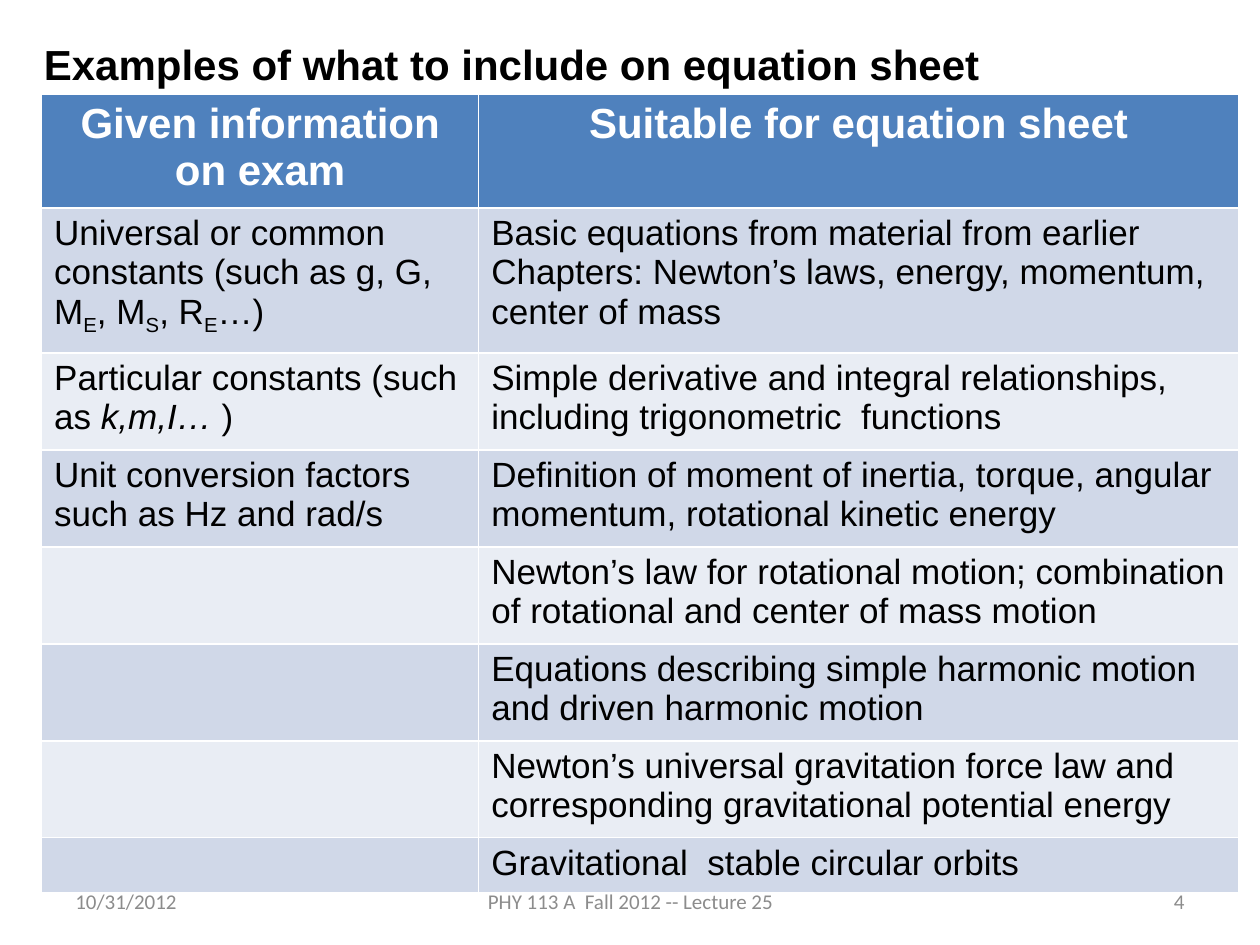
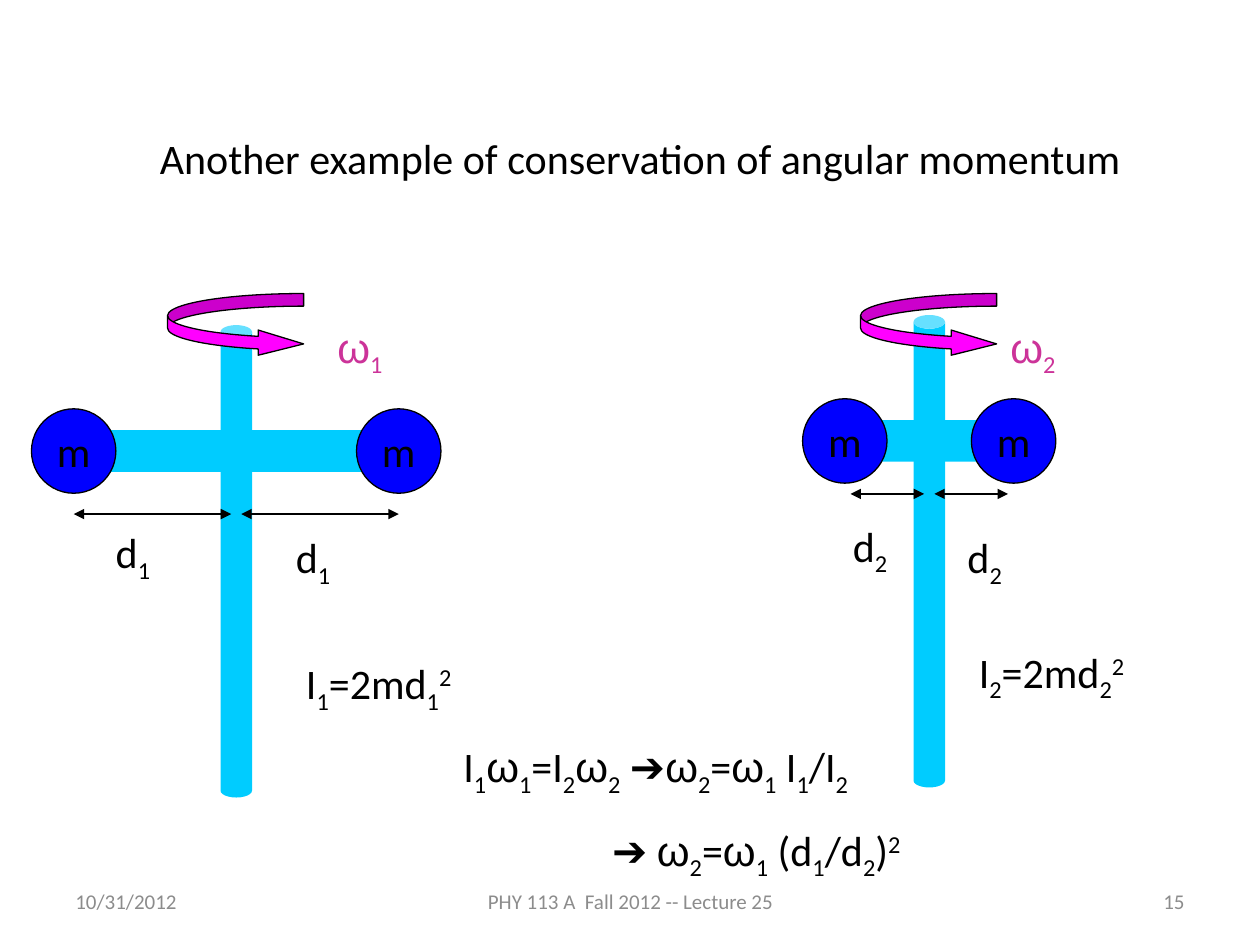
from dataclasses import dataclass
from itertools import groupby

from lxml.etree import SubElement
from pptx import Presentation
from pptx.dml.color import RGBColor
from pptx.enum.shapes import MSO_CONNECTOR, MSO_SHAPE
from pptx.enum.text import MSO_ANCHOR, PP_ALIGN
from pptx.oxml.ns import qn
from pptx.util import Inches, Pt


@dataclass(frozen=True)
class Theme:
    sans: str = "Arial"
    body: str = "Calibri"
    black: str = "000000"
    white: str = "FFFFFF"
    footer_gray: str = "8C8C8C"
    header_blue: str = "4F81BD"
    bands: tuple = ("D0D8E8", "E9EDF4")
    rod: str = "00CCFF"
    ball: str = "0000FF"
    spin: str = "FF00FF"
    omega: str = "CC3399"
    large: int = 24
    cell: int = 20
    small: int = 12
    outline: float = 0.75


THEME = Theme()
BASELINES = {"_": -25000, "^": 30000}


@dataclass(frozen=True)
class Dumbbell:
    index: int
    axis: float
    top: float
    rod_length: float
    rod_cap: float
    ball_reach: float
    arrow_reach: float
    arrow_drop: float
    distance_labels: tuple
    omega_left: float
    inertia_at: tuple


DUMBBELLS = (
    Dumbbell(1, 1.875, 2.58, 2.58, 0.71, 1.29, 1.29, 1.5,
             ((0.82, 4.13), (2.25, 4.17)), 2.58, (2.33, 5.17)),
    Dumbbell(2, 7.375, 2.5, 0.92, 0.252, 0.67, 0.625, 1.42,
             ((6.67, 4.08), (7.58, 4.17)), 7.92, (7.67, 5.08)),
)

EQUATION_SHEET = (
    ("Given information on exam", "Suitable for equation sheet"),
    ("Universal or common constants (such as g, G, M_E, M_S, R_E…)",
     "Basic equations from material from earlier Chapters: Newton’s laws, "
     "energy, momentum, center of mass"),
    ("Particular constants (such as *k,m,I… *)",
     "Simple derivative and integral relationships, including "
     "trigonometric  functions"),
    ("Unit conversion factors such as Hz and rad/s",
     "Definition of moment of inertia, torque, angular momentum, "
     "rotational kinetic energy"),
    ("", "Newton’s law for rotational motion; combination of rotational "
     "and center of mass motion"),
    ("", "Equations describing simple harmonic motion and driven harmonic motion"),
    ("", "Newton’s universal gravitation force law and corresponding "
     "gravitational potential energy"),
    ("", "Gravitational  stable circular orbits"),
)
COLUMN_WIDTHS = (3.47, 6.03)
ROW_HEIGHTS = (0.89, 1.15, *[0.77] * 5, 0.42)


def styled_characters(markup):
    baseline, italic = 0, False
    for character in markup:
        if character in BASELINES:
            baseline = BASELINES[character]
        elif character == "*":
            italic = not italic
        else:
            yield character, (baseline, italic, character == "ω")
            baseline = 0


def write_rich(para, markup, size=THEME.large, color=THEME.black,
               font=THEME.body, bold=False):
    for style, group in groupby(styled_characters(markup), lambda pair: pair[1]):
        baseline, italic, greek = style
        span = para.add_run()
        span.text = "".join(character for character, _ in group)
        span.font.size = Pt(size)
        span.font.name = THEME.sans if greek else font
        span.font.bold = bold
        span.font.color.rgb = RGBColor.from_string(color)
        if italic:
            span.font.italic = True
        if baseline:
            span.font._element.set("baseline", str(baseline))


def add_text(page, markup, left, top, width, height=0.5, align=PP_ALIGN.LEFT,
             anchor=MSO_ANCHOR.TOP, wrap=True, **style):
    box = page.shapes.add_textbox(*map(Inches, (left, top, width, height)))
    frame = box.text_frame
    frame.word_wrap = wrap
    frame.vertical_anchor = anchor
    frame.paragraphs[0].alignment = align
    write_rich(frame.paragraphs[0], markup, **style)
    return box


def add_solid(page, kind, bounds, fill, outlined=False, adjustments=()):
    shape = page.shapes.add_shape(kind, *map(Inches, bounds))
    shape.shadow.inherit = False
    shape.fill.solid()
    shape.fill.fore_color.rgb = RGBColor.from_string(fill)
    if outlined:
        shape.line.color.rgb = RGBColor.from_string(THEME.black)
        shape.line.width = Pt(THEME.outline)
    else:
        shape.line.fill.background()
    for position, value in enumerate(adjustments):
        shape.adjustments[position] = value
    return shape


def add_double_arrow(page, start, end, height):
    arrow = page.shapes.add_connector(
        MSO_CONNECTOR.STRAIGHT, *map(Inches, (start, height, end, height)))
    arrow.line.color.rgb = RGBColor.from_string(THEME.black)
    arrow.line.width = Pt(THEME.outline)
    outline = arrow.line._get_or_add_ln()
    for tip in ("a:headEnd", "a:tailEnd"):
        SubElement(outline, qn(tip), type="triangle")
    SubElement(arrow._element.spPr, qn("a:effectLst"))


def add_footer(page, number):
    parts = (("10/31/2012", 0.5, 2.33, PP_ALIGN.LEFT),
             ("PHY 113 A  Fall 2012 -- Lecture 25", 3.42, 3.17, PP_ALIGN.CENTER),
             (str(number), 7.17, 2.33, PP_ALIGN.RIGHT))
    for text, left, width, align in parts:
        add_text(page, text, left, 6.95, width, 0.4, align, MSO_ANCHOR.MIDDLE,
                 size=THEME.small, color=THEME.footer_gray)


def add_equation_table(page):
    table = page.shapes.add_table(
        len(EQUATION_SHEET), len(COLUMN_WIDTHS), Inches(0.33), Inches(0.75),
        Inches(sum(COLUMN_WIDTHS)), Inches(sum(ROW_HEIGHTS))).table
    for column, width in zip(table.columns, COLUMN_WIDTHS):
        column.width = Inches(width)
    for row, height in zip(table.rows, ROW_HEIGHTS):
        row.height = Inches(height)
    for row_index, texts in enumerate(EQUATION_SHEET):
        header = row_index == 0
        fill = THEME.header_blue if header else THEME.bands[(row_index - 1) % 2]
        for column_index, text in enumerate(texts):
            cell = table.cell(row_index, column_index)
            cell.fill.solid()
            cell.fill.fore_color.rgb = RGBColor.from_string(fill)
            para = cell.text_frame.paragraphs[0]
            para.alignment = PP_ALIGN.CENTER if header else PP_ALIGN.LEFT
            write_rich(para, text, THEME.large if header else THEME.cell,
                       THEME.white if header else THEME.black, THEME.sans, header)


def add_ball(page, center, middle, diameter=0.67):
    bounds = (center - diameter / 2, middle - diameter / 2, diameter, diameter)
    ball = add_solid(page, MSO_SHAPE.OVAL, bounds, THEME.ball, outlined=True)
    frame = ball.text_frame
    frame.word_wrap = False
    frame.vertical_anchor = MSO_ANCHOR.MIDDLE
    frame.paragraphs[0].alignment = PP_ALIGN.CENTER
    write_rich(frame.paragraphs[0], "m")


def add_dumbbell(page, figure):
    axis, middle, length = figure.axis, figure.top + 1, figure.rod_length
    add_solid(page, MSO_SHAPE.CAN, (axis - 0.125, figure.top, 0.25, 3.75),
              THEME.rod, adjustments=(0.438,))
    rod = add_solid(page, MSO_SHAPE.CAN,
                    (axis - 0.165, middle - length / 2, 0.33, length),
                    THEME.rod, adjustments=(figure.rod_cap,))
    rod.rotation = 90
    for side in (-1, 1):
        add_ball(page, axis + side * figure.ball_reach, middle)
        ends = sorted((axis + side * 0.04, axis + side * figure.arrow_reach))
        add_double_arrow(page, *ends, figure.top + figure.arrow_drop)
    for left, top in figure.distance_labels:
        add_text(page, f"d_{figure.index}", left, top, 0.49, wrap=False)
    add_text(page, f"I_{figure.index}=2md_{figure.index}^2", *figure.inertia_at, 1.75)
    add_solid(page, MSO_SHAPE.CURVED_RIGHT_ARROW, (axis - 0.545, 2.33, 1.08, 0.5),
              THEME.spin, outlined=True, adjustments=(0.2, 0.4, 0.722))
    add_text(page, f"ω_{figure.index}", figure.omega_left, 2.5, 0.67, color=THEME.omega)


def add_conclusion(page):
    box = add_text(page, "I_1ω_1=I_2ω_2 ➔ω_2=ω_1 I_1/I_2", 3.58, 5.83, 4, 1.11)
    result = box.text_frame.add_paragraph()
    result.space_before = Pt(15)
    indent = result._p.get_or_add_pPr()
    indent.set("marL", str(Inches(1.18)))
    indent.set("indent", "0")
    write_rich(result, "➔ ω_2=ω_1 (d_1/d_2)^2")


def build_equation_page(page):
    add_footer(page, 4)
    add_text(page, "Examples of what to include on equation sheet",
             0.25, 0.26, 8.5, font=THEME.sans, bold=True)
    add_equation_table(page)


def build_momentum_page(page):
    add_footer(page, 15)
    add_text(page, "Another example of conservation of angular momentum", 1.17, 1, 8)
    for figure in DUMBBELLS:
        add_dumbbell(page, figure)
    add_conclusion(page)


def main():
    deck = Presentation()
    deck.slide_width, deck.slide_height = Inches(10), Inches(7.5)
    for build_page in (build_equation_page, build_momentum_page):
        build_page(deck.slides.add_slide(deck.slide_layouts[6]))
    deck.save("out.pptx")


if __name__ == "__main__":
    main()
